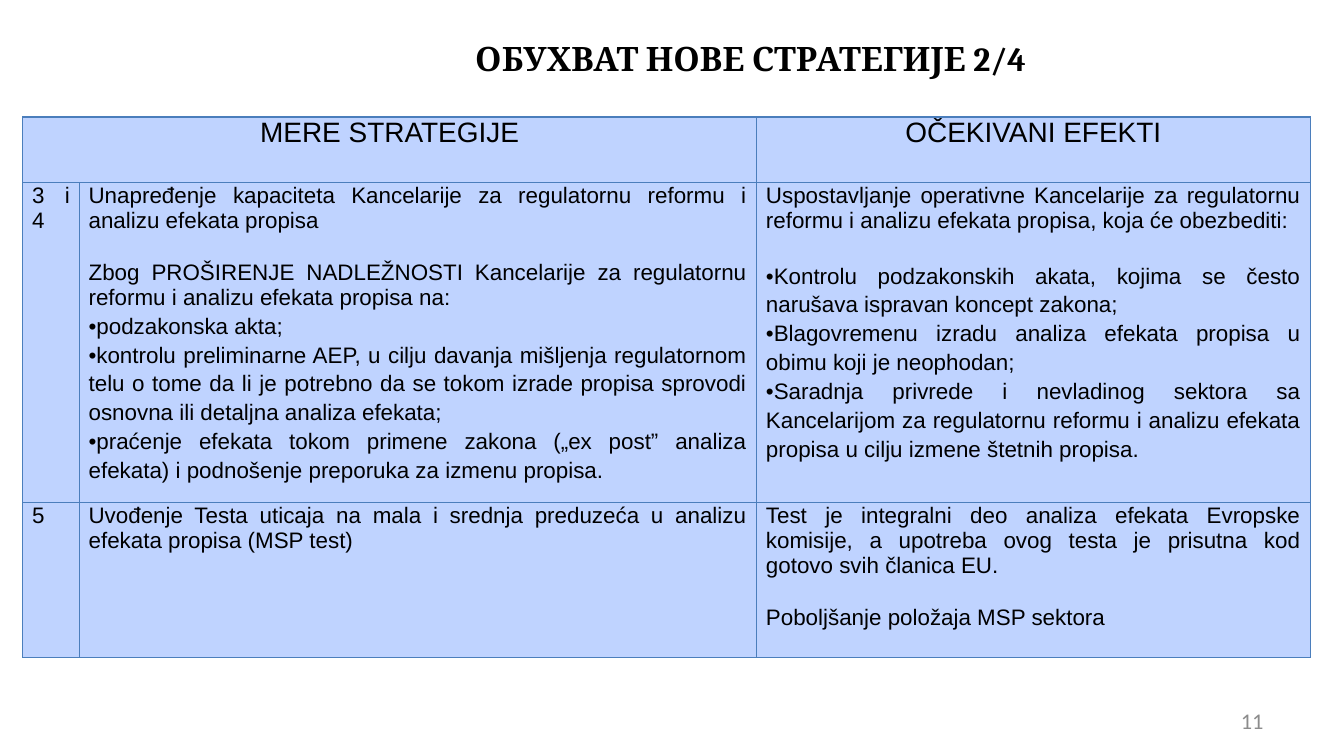
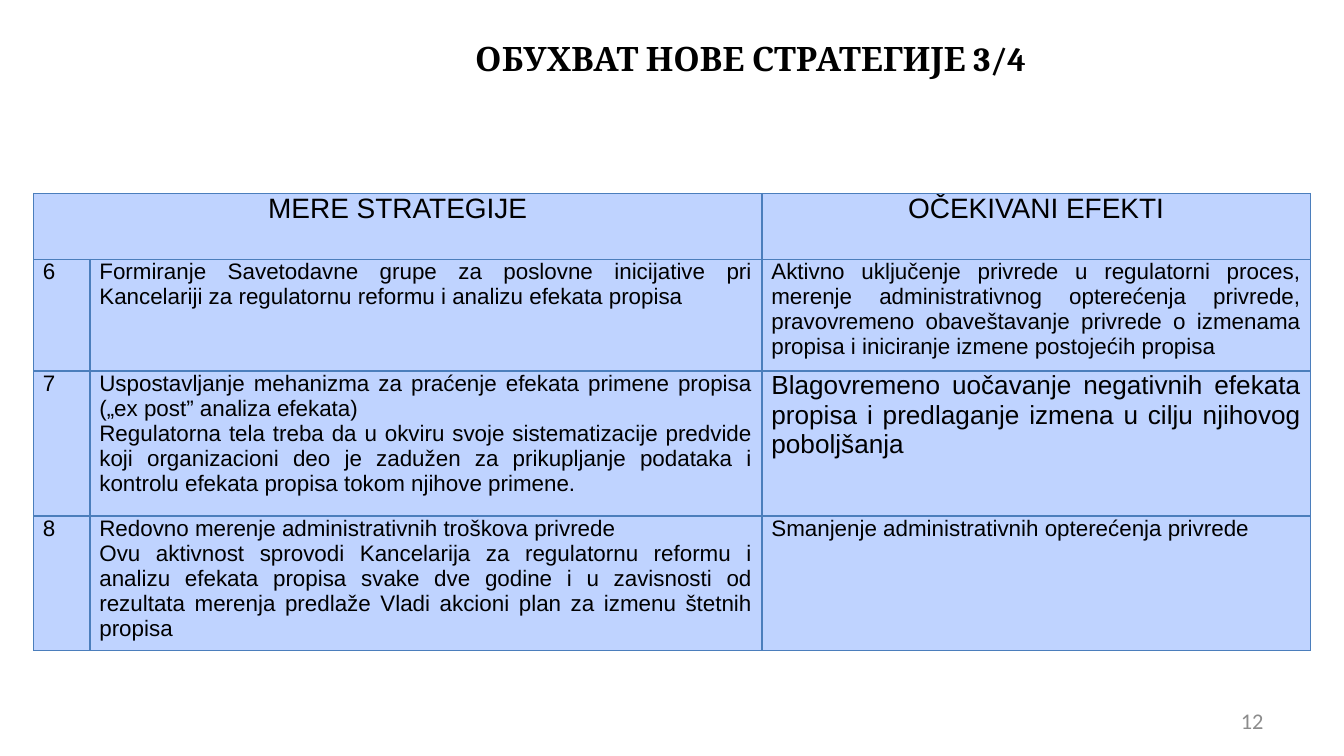
import dataclasses

import lxml.etree
import pptx
import pptx.dml.color
import pptx.enum.text
import pptx.oxml.ns
import pptx.util

Inches = pptx.util.Inches
Pt = pptx.util.Pt
Align = pptx.enum.text.PP_ALIGN
Anchor = pptx.enum.text.MSO_ANCHOR
qn = pptx.oxml.ns.qn


@dataclasses.dataclass(frozen=True)
class Theme:
    ink: str = "000000"
    muted: str = "8C8C8C"
    cell: str = "BFD3FF"
    border: str = "4B7EBC"
    title_font: str = "Cambria"
    table_font: str = "Arial"
    number_font: str = "Calibri"
    title_size: float = 18
    header_size: float = 15
    large_size: float = 14
    body_size: float = 12
    border_width: float = 0.75
    gap: float = 14.5
    bullet_spacing: float = 1.15


THEME = Theme()


def add_text(frame, text, *, font, size, color=THEME.ink, bold=False, align=Align.JUSTIFY,
             bullet=False, before=0, first=False):
    paragraph = frame.paragraphs[0] if first else frame.add_paragraph()
    paragraph.alignment = align
    paragraph.space_before = Pt(before)
    paragraph.line_spacing = THEME.bullet_spacing if bullet else 1.0
    if bullet:
        properties = paragraph._p.get_or_add_pPr()
        properties.set("marL", "0")
        properties.set("indent", "0")
        lxml.etree.SubElement(properties, qn("a:buFont"), typeface=font)
        lxml.etree.SubElement(properties, qn("a:buChar"), char="•")
    paragraph.font.size = Pt(size)
    run = paragraph.add_run()
    run.text = text
    run.font.name = font
    run.font.size = Pt(size)
    run.font.bold = bold
    run.font.color.rgb = pptx.dml.color.RGBColor.from_string(color)


def plain(text, **options):
    return text, options


def bullet(text, **options):
    return text, {"bullet": True, **options}


class Deck:
    def __init__(self, theme):
        self.theme = theme
        self.presentation = pptx.Presentation()
        self.presentation.slide_width = Inches(10)
        self.presentation.slide_height = Inches(10) * 9 // 16
        self.slide = None

    def add_slide(self, title, number):
        self.slide = self.presentation.slides.add_slide(self.presentation.slide_layouts[5])
        self.add_title(title)
        self.add_number(number)

    def add_title(self, text):
        shape = self.slide.shapes.title
        shape.left, shape.top = Inches(1.17), Inches(0.23)
        shape.width, shape.height = Inches(8.83), Inches(0.83)
        frame = shape.text_frame
        frame.auto_size = pptx.enum.text.MSO_AUTO_SIZE.NONE
        frame.vertical_anchor = Anchor.TOP
        add_text(frame, text, font=self.theme.title_font, size=self.theme.title_size,
                 bold=True, align=Align.CENTER, first=True)

    def add_number(self, number):
        shape = self.slide.shapes.add_textbox(Inches(7.17), Inches(5.21), Inches(2.33), Inches(0.3))
        frame = shape.text_frame
        frame.word_wrap = True
        frame.vertical_anchor = Anchor.MIDDLE
        add_text(frame, str(number), font=self.theme.number_font, size=self.theme.body_size,
                 color=self.theme.muted, align=Align.RIGHT, first=True)

    def add_measures(self, left, top, widths, heights, measures):
        shape = self.slide.shapes.add_table(len(heights), len(widths), Inches(left), Inches(top),
                                            Inches(sum(widths)), Inches(sum(heights)))
        table = shape.table
        table.first_row = table.horz_banding = False
        for column, width in zip(table.columns, widths):
            column.width = Inches(width)
        for row, height in zip(table.rows, heights):
            row.height = Inches(height)
        for cell in table.iter_cells():
            self.style_cell(cell)
        table.cell(0, 0).merge(table.cell(0, 1))
        for column, header in ((0, "MERE STRATEGIJE"), (2, "OČEKIVANI EFEKTI")):
            self.fill_cell(table.cell(0, column),
                           [plain(header, size=self.theme.header_size, align=Align.CENTER)])
        for row, (number, measure, effects) in enumerate(measures, start=1):
            for column, content in enumerate(([plain(number)], measure, effects)):
                self.fill_cell(table.cell(row, column), content)

    def fill_cell(self, cell, content):
        for index, (text, options) in enumerate(content):
            settings = {"font": self.theme.table_font, "size": self.theme.body_size, **options}
            add_text(cell.text_frame, text, first=index == 0, **settings)

    def style_cell(self, cell):
        cell.margin_left = cell.margin_right = Inches(0.07)
        cell.margin_top = cell.margin_bottom = 0
        cell.fill.solid()
        cell.fill.fore_color.rgb = pptx.dml.color.RGBColor.from_string(self.theme.cell)
        properties = cell._tc.get_or_add_tcPr()
        for index, side in enumerate(("L", "R", "T", "B")):
            line = lxml.etree.Element(qn(f"a:ln{side}"), w=str(Pt(self.theme.border_width)))
            fill = lxml.etree.SubElement(line, qn("a:solidFill"))
            lxml.etree.SubElement(fill, qn("a:srgbClr"), val=self.theme.border)
            properties.insert(index, line)


def main():
    deck = Deck(THEME)
    gap = THEME.gap

    deck.add_slide("ОБУХВАТ НОВЕ СТРАТЕГИЈЕ 2/4", 11)
    deck.add_measures(0.17, 0.87, (0.42, 5.04, 4.12), (0.49, 2.28, 1.15), [
        ("3 i 4",
         [plain("Unapređenje kapaciteta Kancelarije za regulatornu reformu i analizu efekata propisa"),
          plain("Zbog PROŠIRENJE NADLEŽNOSTI Kancelarije za regulatornu reformu i analizu efekata "
                "propisa na:", before=gap),
          bullet("podzakonska akta;"),
          bullet("kontrolu preliminarne AEP, u cilju davanja mišljenja regulatornom telu o tome da "
                 "li je potrebno da se tokom izrade propisa sprovodi osnovna ili detaljna analiza "
                 "efekata;"),
          bullet("praćenje efekata tokom primene zakona („ex post” analiza efekata) i podnošenje "
                 "preporuka za izmenu propisa.")],
         [plain("Uspostavljanje operativne Kancelarije za regulatornu reformu i analizu efekata "
                "propisa, koja će obezbediti:"),
          bullet("Kontrolu podzakonskih akata, kojima se često narušava ispravan koncept zakona;",
                 before=gap),
          bullet("Blagovremenu izradu analiza efekata propisa u obimu koji je neophodan;"),
          bullet("Saradnja privrede i nevladinog sektora sa Kancelarijom za regulatornu reformu i "
                 "analizu efekata propisa u cilju izmene štetnih propisa.")]),
        ("5",
         [plain("Uvođenje Testa uticaja na mala i srednja preduzeća u analizu efekata propisa "
                "(MSP test)")],
         [plain("Test je integralni deo analiza efekata Evropske komisije, a upotreba ovog testa je "
                "prisutna kod gotovo svih članica EU."),
          plain("Poboljšanje položaja MSP sektora", before=gap)]),
    ])

    deck.add_slide("ОБУХВАТ НОВЕ СТРАТЕГИЈЕ 3/4", 12)
    deck.add_measures(0.25, 1.44, (0.42, 5, 4.08), (0.49, 0.83, 1.08, 1), [
        ("6",
         [plain("Formiranje Savetodavne grupe za poslovne inicijative pri Kancelariji za "
                "regulatornu reformu i analizu efekata propisa")],
         [plain("Aktivno uključenje privrede u regulatorni proces, merenje administrativnog "
                "opterećenja privrede, pravovremeno obaveštavanje privrede o izmenama propisa i "
                "iniciranje izmene postojećih propisa")]),
        ("7",
         [plain("Uspostavljanje mehanizma za praćenje efekata primene propisa („ex post” analiza "
                "efekata)"),
          plain("Regulatorna tela treba da u okviru svoje sistematizacije predvide koji "
                "organizacioni deo je zadužen za prikupljanje podataka i kontrolu efekata propisa "
                "tokom njihove primene.")],
         [plain("Blagovremeno uočavanje negativnih efekata propisa i predlaganje izmena u cilju "
                "njihovog poboljšanja", size=THEME.large_size)]),
        ("8",
         [plain("Redovno merenje administrativnih troškova privrede"),
          plain("Ovu aktivnost sprovodi Kancelarija za regulatornu reformu i analizu efekata "
                "propisa svake dve godine i u zavisnosti od rezultata merenja predlaže Vladi "
                "akcioni plan za izmenu štetnih propisa")],
         [plain("Smanjenje administrativnih opterećenja privrede")]),
    ])

    deck.presentation.save("out.pptx")


if __name__ == "__main__":
    main()
